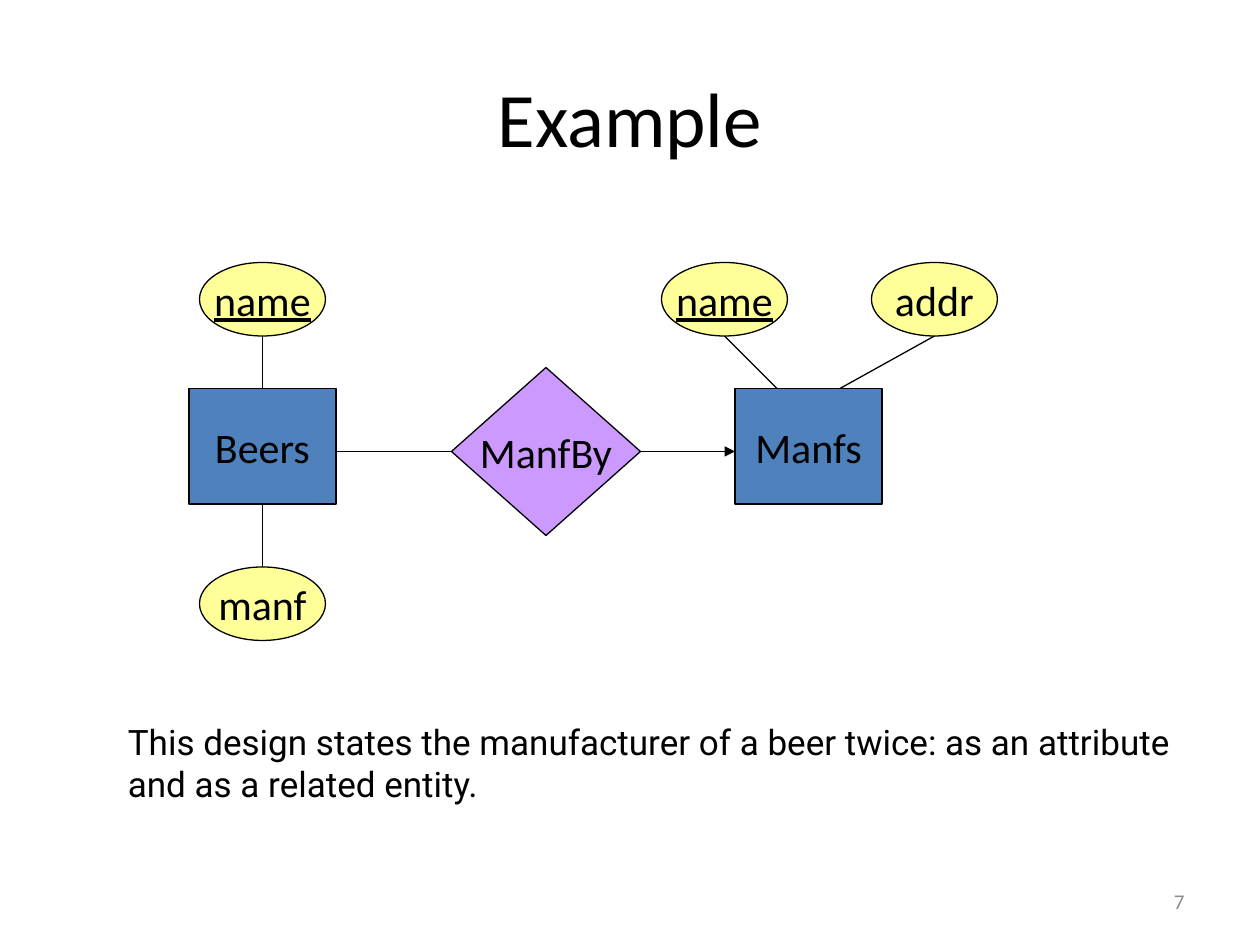
from lxml import etree
from pptx import Presentation
from pptx.dml.color import RGBColor
from pptx.enum.shapes import MSO_CONNECTOR, MSO_SHAPE
from pptx.enum.text import MSO_ANCHOR, PP_ALIGN
from pptx.oxml.ns import qn
from pptx.util import Pt

STRAIGHT = MSO_CONNECTOR.STRAIGHT
LEFT, CENTER, RIGHT = PP_ALIGN.LEFT, PP_ALIGN.CENTER, PP_ALIGN.RIGHT
TOP, MIDDLE = MSO_ANCHOR.TOP, MSO_ANCHOR.MIDDLE

THEME = {
    "font": "Calibri", "note_font": "Roboto",
    "title": 44, "label": 24, "note": 20, "number": 12, "line": 0.75,
    "ink": "000000", "muted": "8C8C8C",
}
KINDS = {
    "entity": (MSO_SHAPE.RECTANGLE, 84, 66, "4F81BD"),
    "relationship": (MSO_SHAPE.DIAMOND, 108, 96, "CC99FF"),
    "attribute": (MSO_SHAPE.OVAL, 72, 42, "FFFF99"),
}

TITLE = "Example"
NOTE = ("This design states the manufacturer of a beer twice: "
        "as an attribute and as a related entity.")
NUMBER = "7"

BEERS_X, MANFBY_X, MANFS_X = 150, 312, 462
MANFS_NAME_X, MANFS_ADDR_X = 414, 534
ENTITY_Y, LINK_Y, UPPER_Y, LOWER_Y = 255, 258, 171, 345

NODES = [
    ("entity", "Beers", BEERS_X, ENTITY_Y, False),
    ("entity", "Manfs", MANFS_X, ENTITY_Y, False),
    ("relationship", "ManfBy", MANFBY_X, LINK_Y, False),
    ("attribute", "name", BEERS_X, UPPER_Y, True),
    ("attribute", "manf", BEERS_X, LOWER_Y, False),
    ("attribute", "name", MANFS_NAME_X, UPPER_Y, True),
    ("attribute", "addr", MANFS_ADDR_X, UPPER_Y, False),
]


def half(kind):
    return KINDS[kind][1] / 2, KINDS[kind][2] / 2


ENTITY_HALF_W, ENTITY_HALF_H = half("entity")
DIAMOND_HALF_W = half("relationship")[0]
OVAL_HALF_H = half("attribute")[1]
ENTITY_TOP, ENTITY_BOTTOM = ENTITY_Y - ENTITY_HALF_H, ENTITY_Y + ENTITY_HALF_H
OVAL_BOTTOM = UPPER_Y + OVAL_HALF_H

LINES = [
    ((BEERS_X, OVAL_BOTTOM), (BEERS_X, ENTITY_TOP), False),
    ((BEERS_X, LOWER_Y - OVAL_HALF_H), (BEERS_X, ENTITY_BOTTOM), False),
    ((MANFS_NAME_X, OVAL_BOTTOM), (MANFS_X - 18, ENTITY_TOP), False),
    ((MANFS_ADDR_X, OVAL_BOTTOM), (MANFS_X + 18, ENTITY_TOP), False),
    ((MANFBY_X - DIAMOND_HALF_W, LINK_Y), (BEERS_X + ENTITY_HALF_W, LINK_Y), False),
    ((MANFBY_X + DIAMOND_HALF_W, LINK_Y), (MANFS_X - ENTITY_HALF_W, LINK_Y), True),
]


def color(name):
    return RGBColor.from_string(THEME.get(name, name))


def write(shape, text, size, align=CENTER, anchor=MIDDLE, font="font",
          ink="ink", wrap=True, underline=None):
    frame = shape.text_frame
    frame.word_wrap = wrap
    frame.vertical_anchor = anchor
    paragraph = frame.paragraphs[0]
    paragraph.alignment = align
    run = paragraph.add_run()
    run.text = text
    run.font.name = THEME[font]
    run.font.size = Pt(THEME[size])
    run.font.color.rgb = color(ink)
    run.font.underline = underline


def outline(shape):
    shape.line.color.rgb = color("ink")
    shape.line.width = Pt(THEME["line"])


def add_node(slide, kind, text, x, y, is_key):
    preset, width, height, fill = KINDS[kind]
    shape = slide.shapes.add_shape(
        preset, Pt(x - width / 2), Pt(y - height / 2), Pt(width), Pt(height))
    shape.shadow.inherit = False
    shape.fill.solid()
    shape.fill.fore_color.rgb = color(fill)
    outline(shape)
    write(shape, text, "label", wrap=False, underline=is_key or None)


def add_line(slide, start, end, has_arrow):
    connector = slide.shapes.add_connector(
        STRAIGHT, *(Pt(value) for value in start + end))
    outline(connector)
    if has_arrow:
        etree.SubElement(connector.line._get_or_add_ln(), qn("a:tailEnd"), type="triangle")
    etree.SubElement(connector._element.spPr, qn("a:effectLst"))


def add_text(slide, box, text, size, **style):
    shape = slide.shapes.add_textbox(*(Pt(value) for value in box))
    write(shape, text, size, **style)


def main():
    presentation = Presentation()
    presentation.slide_width, presentation.slide_height = Pt(720), Pt(540)
    slide = presentation.slides.add_slide(presentation.slide_layouts[5])

    title = slide.shapes.title
    title.left, title.top, title.width, title.height = Pt(36), Pt(21.6), Pt(648), Pt(90)
    write(title, TITLE, "title")

    for line in LINES:
        add_line(slide, *line)
    for node in NODES:
        add_node(slide, *node)

    add_text(slide, (66, 408, 618, 55.5), NOTE, "note",
             align=LEFT, anchor=TOP, font="note_font")
    add_text(slide, (516, 500.5, 168, 28.75), NUMBER, "number",
             align=RIGHT, ink="muted")
    presentation.save("out.pptx")


if __name__ == "__main__":
    main()
